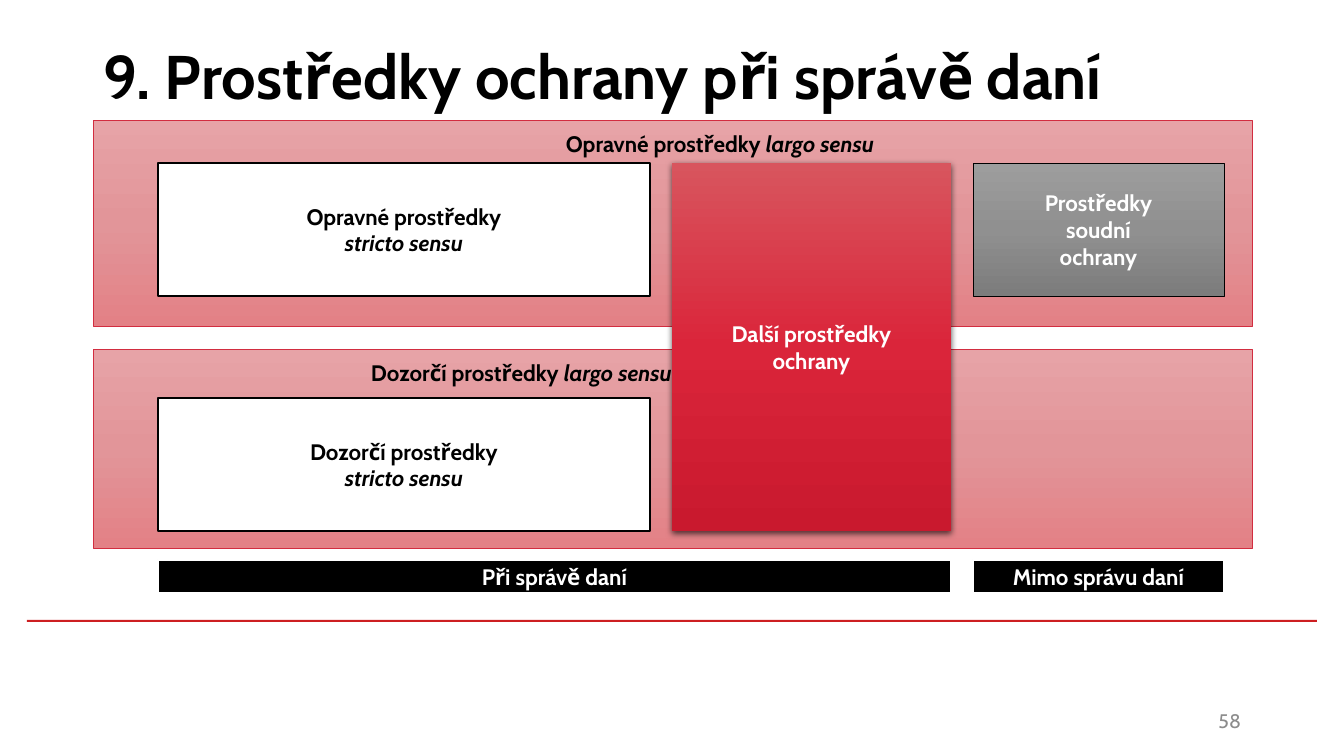
from copy import deepcopy

from pptx import Presentation
from pptx.dml.color import RGBColor
from pptx.enum.shapes import MSO_SHAPE
from pptx.enum.text import MSO_ANCHOR, MSO_AUTO_SIZE, PP_ALIGN
from pptx.oxml import parse_xml
from pptx.oxml.ns import nsdecls, qn
from pptx.util import Pt

PX = 914400 / 100.8
FONT = "Cabin"
BLACK = RGBColor(0x00, 0x00, 0x00)
WHITE = RGBColor(0xFF, 0xFF, 0xFF)
RULE_RED = RGBColor(0xCD, 0x1F, 0x21)
EDGE_RED = RGBColor(0xD2, 0x2D, 0x40)
NUMBER_GRAY = RGBColor(0x8C, 0x8C, 0x8C)
PINKS = [RGBColor(0xE7, 0xA3, 0xA7), RGBColor(0xE2, 0x95, 0x99), RGBColor(0xE3, 0x81, 0x86)]
REDS = [RGBColor(0xD8, 0x55, 0x5E), RGBColor(0xDA, 0x25, 0x3A), RGBColor(0xC9, 0x19, 0x2E)]
GRAYS = [RGBColor(0x9D, 0x9D, 0x9D), RGBColor(0x90, 0x90, 0x90), RGBColor(0x7C, 0x7C, 0x7C)]


def px(*lengths):
    return [round(n * PX) for n in lengths]


def add_box(box, fill, line=None, width=0, lines=(), color=BLACK, align=PP_ALIGN.CENTER):
    """Add a rectangle; a list as fill is a gradient, each line is (upright, italic) text."""
    sp = s.shapes.add_shape(MSO_SHAPE.RECTANGLE, *px(*box))
    sp.shadow.inherit = False
    if isinstance(fill, list):
        sp.fill.gradient()
        sp.fill.gradient_angle = 270
        stops = sp._element.spPr.find(".//" + qn("a:gsLst"))
        stops.insert(1, deepcopy(stops[0]))
        for i, stop in enumerate(sp.fill.gradient_stops):
            stop.position = i / 2
            stop.color.rgb = fill[i]
    else:
        sp.fill.solid()
        sp.fill.fore_color.rgb = fill
    if line is None:
        sp.line.fill.background()
    else:
        sp.line.color.rgb = line
        sp.line.width = Pt(width)
    tf = sp.text_frame
    tf.word_wrap = True
    tf.vertical_anchor = MSO_ANCHOR.MIDDLE
    for i, parts in enumerate(lines):
        p = tf.add_paragraph() if i else tf.paragraphs[0]
        p.alignment = align
        for text, italic in zip(parts, (False, True)):
            if text:
                r = p.add_run()
                r.text = text
                r.font.name, r.font.size = FONT, Pt(16)
                r.font.bold, r.font.italic = True, italic
                r.font.color.rgb = color
    return sp


prs = Presentation()
prs.slide_width, prs.slide_height = px(1344, 756)
s = prs.slides.add_slide(prs.slide_layouts[5])

title = s.shapes.title
title.left, title.top, title.width, title.height = px(93, 2, 1159, 146)
tf = title.text_frame
tf.text = "9. Prostředky ochrany při správě daní"
tf.auto_size = MSO_AUTO_SIZE.NONE
tf.vertical_anchor = MSO_ANCHOR.MIDDLE
p = tf.paragraphs[0]
p.alignment = PP_ALIGN.LEFT
p.font.name, p.font.size, p.font.bold = FONT, Pt(44), True
p.font.color.rgb = BLACK

add_box((27, 620, 1290, 2), RULE_RED)

# Panels, each with a heading at its own indent
for top, height, indent, heading in [
    (349, 199, 278, "Dozorčí prostředky "),
    (120, 206, 473, "Opravné prostředky "),
]:
    panel = add_box((93, top, 1159, height), PINKS, EDGE_RED, 0.5,
                    [(heading, "largo sensu")], align=PP_ALIGN.LEFT)
    tf = panel.text_frame
    tf.vertical_anchor = MSO_ANCHOR.TOP
    tf.margin_left, tf.margin_top = px(indent, 10)

other_means = add_box((672, 163, 279, 368), REDS, color=WHITE,
                      lines=[("Další prostředky",), ("ochrany",)])
effects = other_means._element.spPr.find(qn("a:effectLst"))
effects.append(parse_xml(
    f'<a:outerShdw {nsdecls("a")} blurRad="57150" dist="19050" dir="5400000" algn="ctr" '
    'rotWithShape="0"><a:srgbClr val="000000"><a:alpha val="63000"/></a:srgbClr></a:outerShdw>'))

for top, kind in [(163, "Opravné prostředky"), (398, "Dozorčí prostředky")]:
    add_box((158, top, 492, 133), WHITE, BLACK, 1, [(kind,), ("", "stricto sensu")])

add_box((973, 163, 251, 133), GRAYS, BLACK, 0.5,
        [("Prostředky",), ("soudní",), ("ochrany",)], WHITE)

for left, width, scope in [(158, 793, "Při správě daní"), (973, 251, "Mimo správu daní")]:
    add_box((left, 560, width, 33), BLACK, WHITE, 1.5, [(scope,)], WHITE)

number = s.shapes.add_textbox(*px(949, 701, 302, 40))
tf = number.text_frame
tf.word_wrap = True
tf.vertical_anchor = MSO_ANCHOR.MIDDLE
tf.text = "58"
p = tf.paragraphs[0]
p.alignment = PP_ALIGN.RIGHT
p.font.name, p.font.size = FONT, Pt(14)
p.font.color.rgb = NUMBER_GRAY

prs.save("out.pptx")
